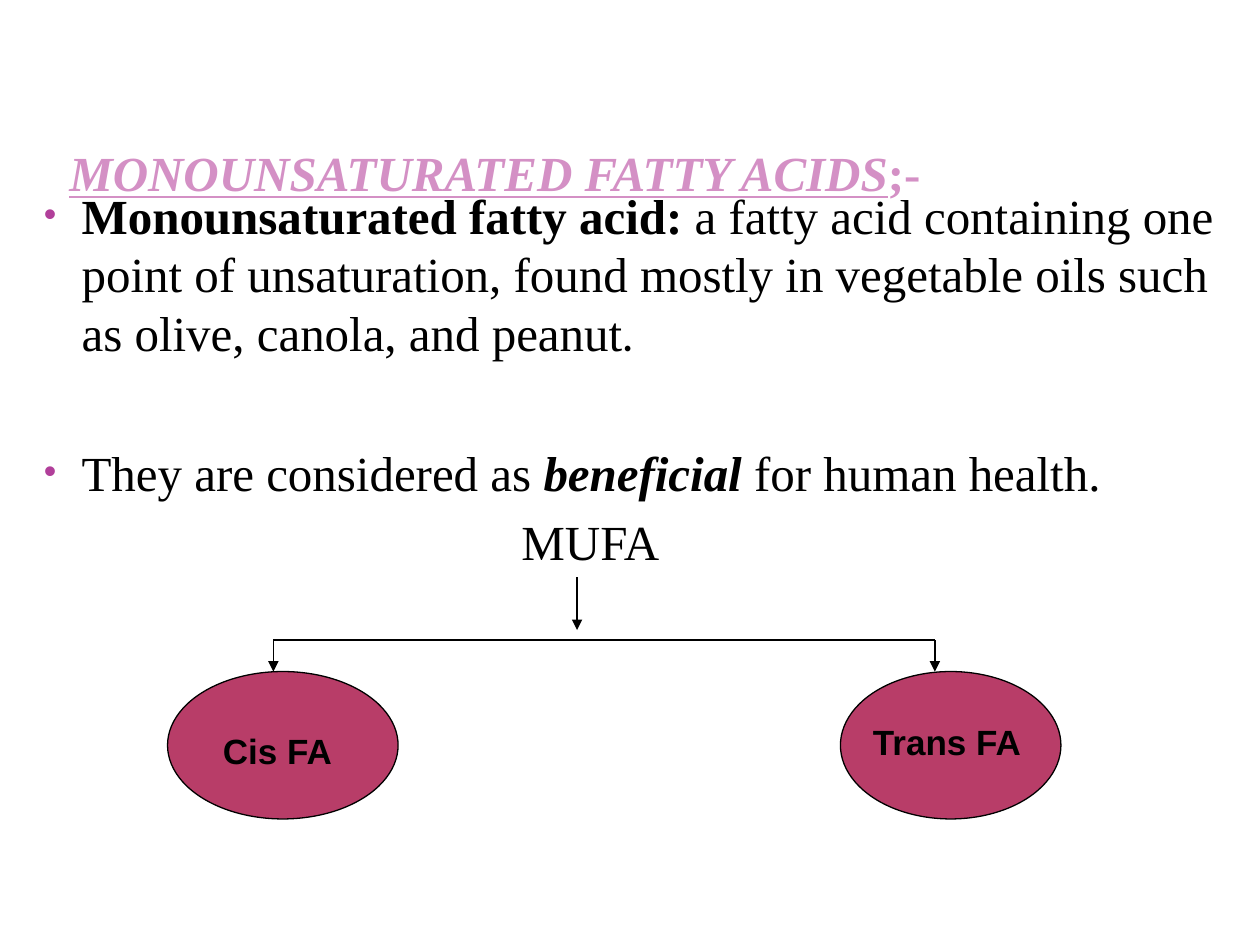
from dataclasses import dataclass

from lxml.etree import SubElement
from pptx import Presentation
from pptx.dml.color import RGBColor
from pptx.enum.shapes import MSO_CONNECTOR as Connector, MSO_SHAPE as Shape
from pptx.enum.text import MSO_ANCHOR as Anchor
from pptx.oxml.ns import qn
from pptx.util import Inches, Pt

SERIF = "Times New Roman"
BLACK, PINK, PURPLE, BERRY = "000000", "D490C5", "B13F9A", "B83D68"
OVAL_TOP, OVAL_HEIGHT, BRANCH_Y = 5.33, 1.17, 5.08


@dataclass
class Branch:
    """One kind of fatty acid with its arrow, oval and label."""
    label: str
    arrow_x: float
    oval_left: float
    oval_width: float
    label_left: float
    label_top: float
    label_width: float


BRANCHES = [
    Branch("Cis FA", 2.17, 1.33, 1.83, 1.67, 5.74, 1.08),
    Branch("Trans FA", 7.42, 6.67, 1.75, 6.83, 5.67, 1.5),
]


def colour(value: str) -> RGBColor:
    return RGBColor.from_string(value)


def add_box(page, left: float, top: float, width: float, height: float):
    box = page.shapes.add_textbox(Inches(left), Inches(top), Inches(width), Inches(height))
    box.text_frame.word_wrap = True
    return box.text_frame


def add_span(para, text: str, *, size=28, font=SERIF, color=BLACK,
             bold=False, italic=False, underline=False) -> None:
    span = para.add_run()
    span.text = text
    span.font.size, span.font.name = Pt(size), font
    span.font.bold, span.font.italic, span.font.underline = bold, italic, underline
    span.font.color.rgb = colour(color)


def format_para(para, *, margin: float, before=0, bullet=False) -> None:
    para.space_before = Pt(before)
    props = para._p.get_or_add_pPr()
    props.set("marL", str(Inches(margin)))
    props.set("indent", str(Inches(-margin if bullet else 0)))
    if bullet:
        SubElement(SubElement(props, qn("a:buClr")), qn("a:srgbClr"), val=PURPLE)
        SubElement(props, qn("a:buSzPct"), val="73000")
        SubElement(props, qn("a:buFont"), typeface="Arial")
        SubElement(props, qn("a:buChar"), char="•")


def add_line(page, x1: float, y1: float, x2: float, y2: float, arrow=False) -> None:
    line = page.shapes.add_connector(
        Connector.STRAIGHT, Inches(x1), Inches(y1), Inches(x2), Inches(y2))
    line.line.color.rgb = colour(BLACK)
    line.line.width = Pt(0.75)
    if arrow:
        SubElement(line.line._get_or_add_ln(), qn("a:tailEnd"), type="triangle")
    SubElement(line._element.spPr, qn("a:effectLst"))


def add_oval(page, branch: Branch) -> None:
    oval = page.shapes.add_shape(
        Shape.OVAL, Inches(branch.oval_left), Inches(OVAL_TOP),
        Inches(branch.oval_width), Inches(OVAL_HEIGHT))
    oval.shadow.inherit = False
    oval.fill.solid()
    oval.fill.fore_color.rgb = colour(BERRY)
    oval.line.color.rgb = colour(BLACK)
    oval.line.width = Pt(0.75)


def add_title(page) -> None:
    frame = add_box(page, 0.5, 0.35, 7.92, 1.25)
    frame.vertical_anchor = Anchor.BOTTOM
    frame.margin_left = frame.margin_right = Inches(0.05)
    frame.margin_top = frame.margin_bottom = 0
    para = frame.paragraphs[0]
    add_span(para, "MONOUNSATURATED FATTY ACIDS", color=PINK,
             bold=True, italic=True, underline=True)
    add_span(para, ";-", color=PINK, bold=True)


def add_body(page) -> None:
    frame = add_box(page, 0.25, 1.42, 9.5, 5.75)
    definition = frame.paragraphs[0]
    format_para(definition, margin=0.3, bullet=True)
    add_span(definition, "Monounsaturated fatty acid: ", bold=True)
    add_span(definition, "a fatty acid containing one point of unsaturation, found "
                         "mostly in vegetable oils such as olive, canola, and peanut")
    add_span(definition, ".", size=26, font="Lato")

    benefit = frame.add_paragraph()
    format_para(benefit, margin=0.3, before=46, bullet=True)
    add_span(benefit, "They are considered as ")
    add_span(benefit, "beneficial", bold=True, italic=True)
    add_span(benefit, " for human health.")

    root = frame.add_paragraph()
    format_para(root, margin=3.79, before=6)
    add_span(root, "MUFA")


def add_tree(page) -> None:
    add_line(page, 4.58, 4.58, 4.58, 5, arrow=True)
    add_line(page, BRANCHES[0].arrow_x, BRANCH_Y, BRANCHES[-1].arrow_x, BRANCH_Y)
    for branch in BRANCHES:
        add_line(page, branch.arrow_x, BRANCH_Y, branch.arrow_x, OVAL_TOP, arrow=True)
        add_oval(page, branch)
        frame = add_box(page, branch.label_left, branch.label_top, branch.label_width, 0.43)
        add_span(frame.paragraphs[0], branch.label, size=20, font="Arial", bold=True)


def main() -> None:
    """Build the slide on monounsaturated fatty acids."""
    deck = Presentation()
    deck.slide_width, deck.slide_height = Inches(10), Inches(7.5)
    page = deck.slides.add_slide(deck.slide_layouts[6])
    add_title(page)
    add_body(page)
    add_tree(page)
    deck.save("out.pptx")


if __name__ == "__main__":
    main()
